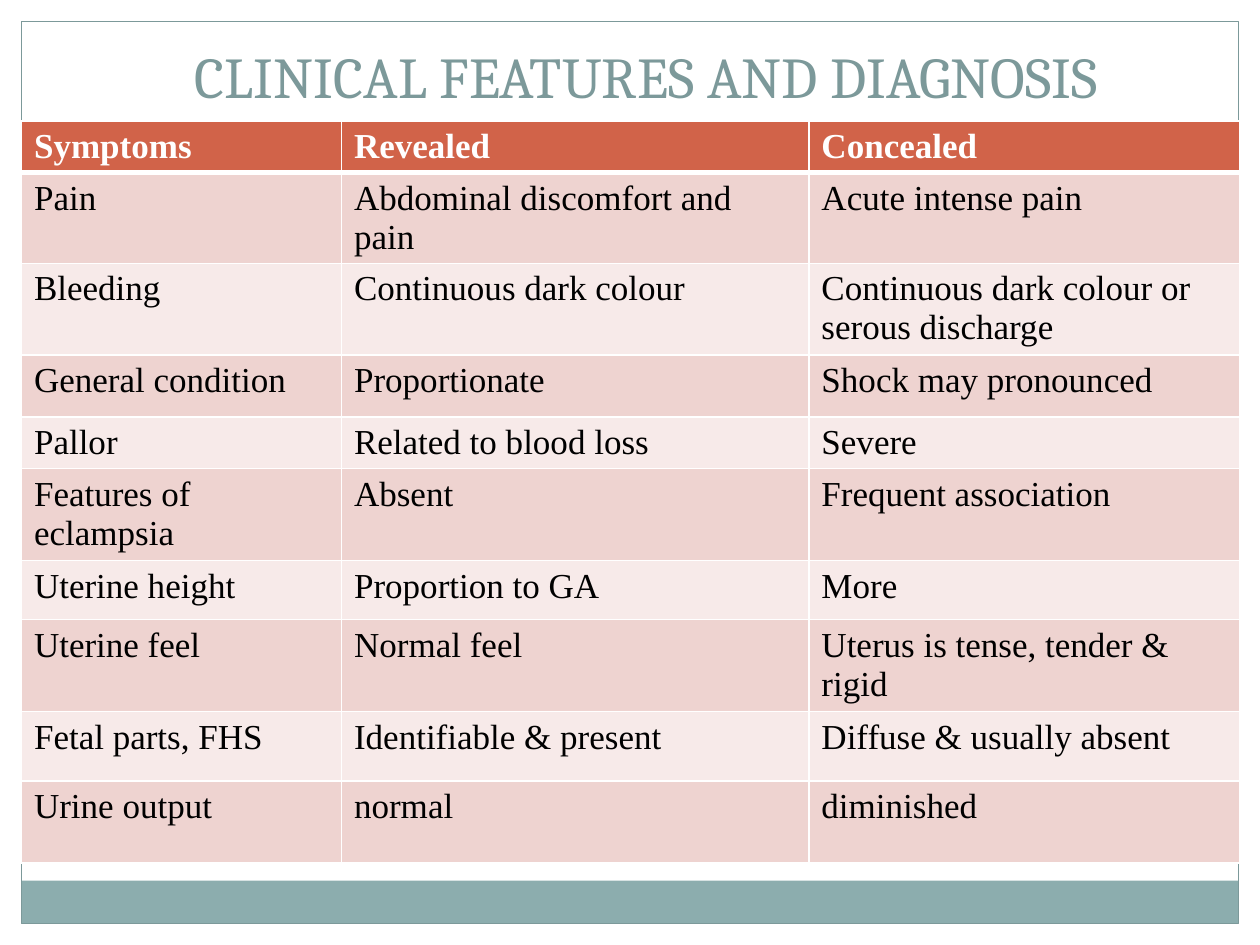
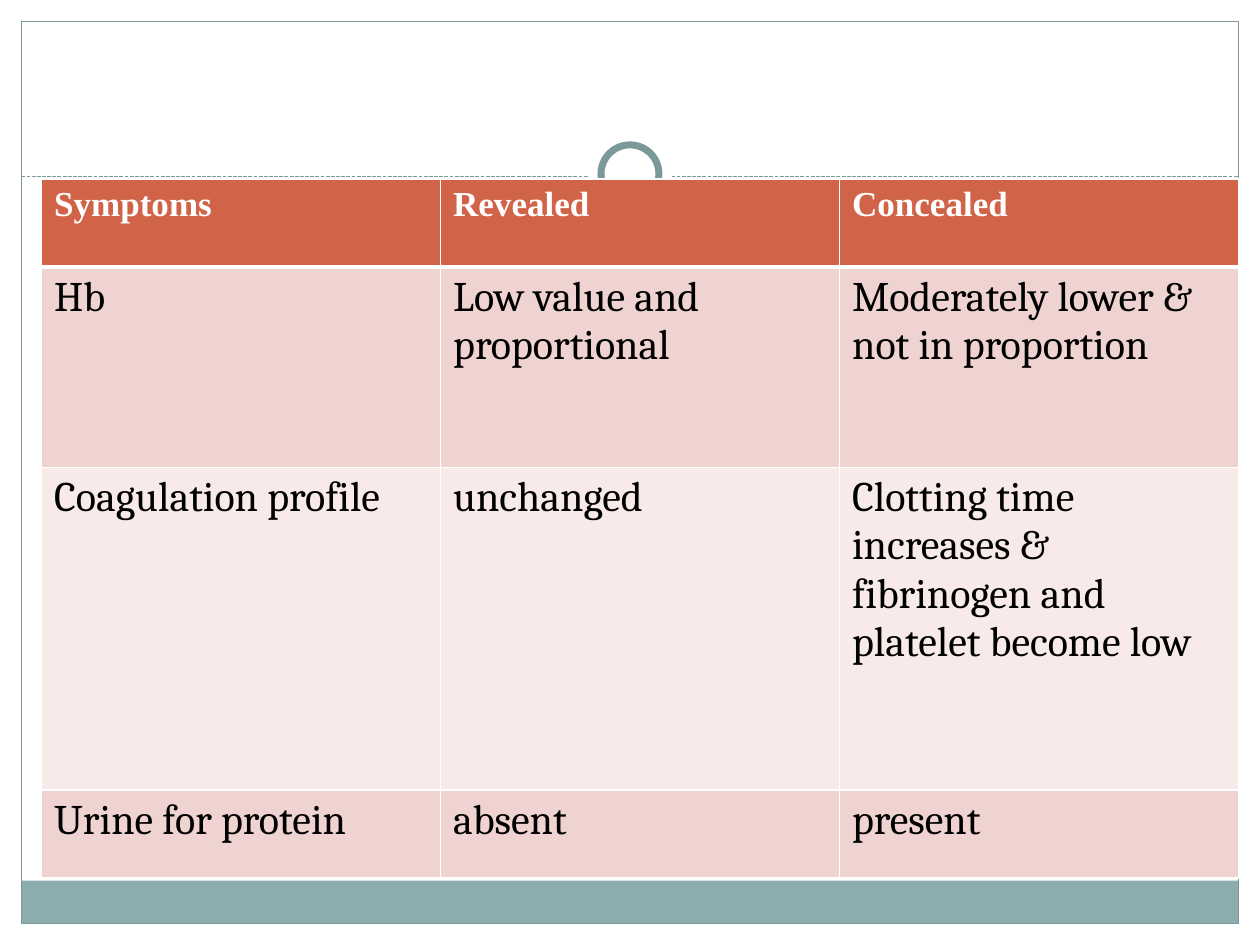
import pptx
import pptx.dml.color
import pptx.enum.dml
import pptx.enum.shapes
import pptx.enum.text
import pptx.oxml
import pptx.oxml.ns
import pptx.util

Inches = pptx.util.Inches
Pt = pptx.util.Pt
SHAPES = pptx.enum.shapes.MSO_SHAPE

COLORS = {
    "white": "FFFFFF",
    "text": "000000",
    "teal": "7C999A",
    "footer": "8CADAE",
    "header": "D16349",
    "odd_row": "EED3D0",
    "even_row": "F7EAE9",
}
SERIF, HEADER_FONT = "Cambria", "Times New Roman"
TITLE_ONLY, BLANK = 5, 6
PAGE_BOX = (0.17, 0.17, 9.66, 7.16)
HEADINGS = ("Symptoms", "Revealed", "Concealed")

CLINICAL_FEATURES = [
    HEADINGS,
    ("Pain", "Abdominal discomfort and pain", "Acute intense pain"),
    ("Bleeding", "Continuous dark colour", "Continuous dark colour or serous discharge"),
    ("General condition", "Proportionate", "Shock may pronounced"),
    ("Pallor", "Related to blood loss", "Severe"),
    ("Features of eclampsia", "Absent", "Frequent association"),
    ("Uterine height", "Proportion to GA", "More"),
    ("Uterine feel", "Normal feel", "Uterus is tense, tender & rigid"),
    ("Fetal parts, FHS", "Identifiable & present", "Diffuse & usually absent"),
    ("Urine output", "normal", "diminished"),
]
LABORATORY_FINDINGS = [
    HEADINGS,
    ("Hb", "Low value and proportional", "Moderately lower & not in proportion"),
    ("Coagulation profile", "unchanged",
     "Clotting time increases & fibrinogen and platelet become low"),
    ("Urine for protein", "absent", "present"),
]


def rgb(name):
    return pptx.dml.color.RGBColor.from_string(COLORS[name])


def add_panel(page, kind, box, fill=None, line=None, width=0.75):
    panel = page.shapes.add_shape(kind, *map(Inches, box))
    panel.shadow.inherit = False
    if fill:
        panel.fill.solid()
        panel.fill.fore_color.rgb = rgb(fill)
    else:
        panel.fill.background()
    if line:
        panel.line.color.rgb = rgb(line)
        panel.line.width = Pt(width)
    else:
        panel.line.fill.background()


def add_dashed_rule(page, left, right, top):
    rule = page.shapes.add_connector(
        pptx.enum.shapes.MSO_CONNECTOR.STRAIGHT,
        Inches(left), Inches(top), Inches(right), Inches(top))
    rule.line.color.rgb = rgb("teal")
    rule.line.width = Pt(0.75)
    rule.line.dash_style = pptx.enum.dml.MSO_LINE.SQUARE_DOT
    properties = rule._element.spPr
    properties.append(properties.makeelement(pptx.oxml.ns.qn("a:effectLst"), {}))


def add_page_frame(page, box):
    """Draw the footer band, outline, dashed rule and centred ring."""
    left, top, width, height = box
    footer_height = 0.34
    add_panel(page, SHAPES.RECTANGLE,
              (left, top + height - footer_height, width, footer_height), fill="footer")
    add_panel(page, SHAPES.RECTANGLE, box, line="teal")
    rule_top = top + 1.23
    add_dashed_rule(page, left, left + width, rule_top)
    middle = left + width / 2
    for size, line in ((0.67, None), (0.46, "teal")):
        ring_box = (middle - size / 2, rule_top - 0.02 - size / 2, size, size)
        add_panel(page, SHAPES.OVAL, ring_box, fill="white", line=line, width=4)


def set_title(page, text, box):
    title = page.shapes.title
    title.left, title.top, title.width, title.height = map(Inches, box)
    frame = title.text_frame
    frame.text = text
    frame.auto_size = pptx.enum.text.MSO_AUTO_SIZE.NONE
    frame.vertical_anchor = pptx.enum.text.MSO_ANCHOR.BOTTOM
    para = frame.paragraphs[0]
    para.alignment = pptx.enum.text.PP_ALIGN.CENTER
    set_font(para, SERIF, 33, "teal")


def set_font(para, name, size, color, bold=False):
    para.font.name = name
    para.font.size = Pt(size)
    para.font.bold = bold
    para.font.color.rgb = rgb(color)


def set_borders(cell, widths):
    """Give the cell white borders; widths are points keyed by side (L, R, T, B)."""
    properties = cell._tc.get_or_add_tcPr()
    for side, width in widths.items():
        properties.append(pptx.oxml.parse_xml(
            f'<a:ln{side} {pptx.oxml.ns.nsdecls("a")} w="{Pt(width)}">'
            f'<a:solidFill><a:srgbClr val="{COLORS["white"]}"/></a:solidFill>'
            f'</a:ln{side}>'))


def fill_cell(cell, text, row, body_font, body_size):
    set_borders(cell, {"L": 1, "R": 1, "T": 3 if row == 1 else 1, "B": 3 if row == 0 else 1})
    cell.fill.solid()
    cell.text = text
    para = cell.text_frame.paragraphs[0]
    if row == 0:
        cell.fill.fore_color.rgb = rgb("header")
        set_font(para, HEADER_FONT, 20, "white", bold=True)
    else:
        cell.fill.fore_color.rgb = rgb("odd_row" if row % 2 else "even_row")
        set_font(para, body_font, body_size, "text")


def add_comparison_table(page, left, top, column_widths, row_heights, records,
                         body_font, body_size):
    table = page.shapes.add_table(
        len(records), len(column_widths), Inches(left), Inches(top),
        Inches(sum(column_widths)), Inches(sum(row_heights))).table
    table.horz_banding = False
    for column, width in zip(table.columns, column_widths):
        column.width = Inches(width)
    for row, height in zip(table.rows, row_heights):
        row.height = Inches(height)
    for row, record in enumerate(records):
        for column, text in enumerate(record):
            fill_cell(table.cell(row, column), text, row, body_font, body_size)


def add_page(deck, layout):
    page = deck.slides.add_slide(deck.slide_layouts[layout])
    add_page_frame(page, PAGE_BOX)
    return page


def add_clinical_features(deck):
    page = add_page(deck, TITLE_ONLY)
    set_title(page, "CLINICAL FEATURES AND DIAGNOSIS", (0.67, 0.25, 8.92, 0.67))
    add_comparison_table(
        page, 0.17, 0.96, (2.54, 3.71, 3.42),
        (0.41, 0.72, 0.73, 0.49, 0.41, 0.73, 0.47, 0.73, 0.55, 0.65),
        CLINICAL_FEATURES, HEADER_FONT, 20)


def add_laboratory_findings(deck):
    page = add_page(deck, BLANK)
    add_comparison_table(
        page, 0.33, 1.42, (9.5 / 3,) * 3, (0.7, 1.59, 2.56, 0.7),
        LABORATORY_FINDINGS, SERIF, 24)


def main():
    deck = pptx.Presentation()
    deck.slide_width, deck.slide_height = Inches(10), Inches(7.5)
    add_clinical_features(deck)
    add_laboratory_findings(deck)
    deck.save("out.pptx")


if __name__ == "__main__":
    main()
